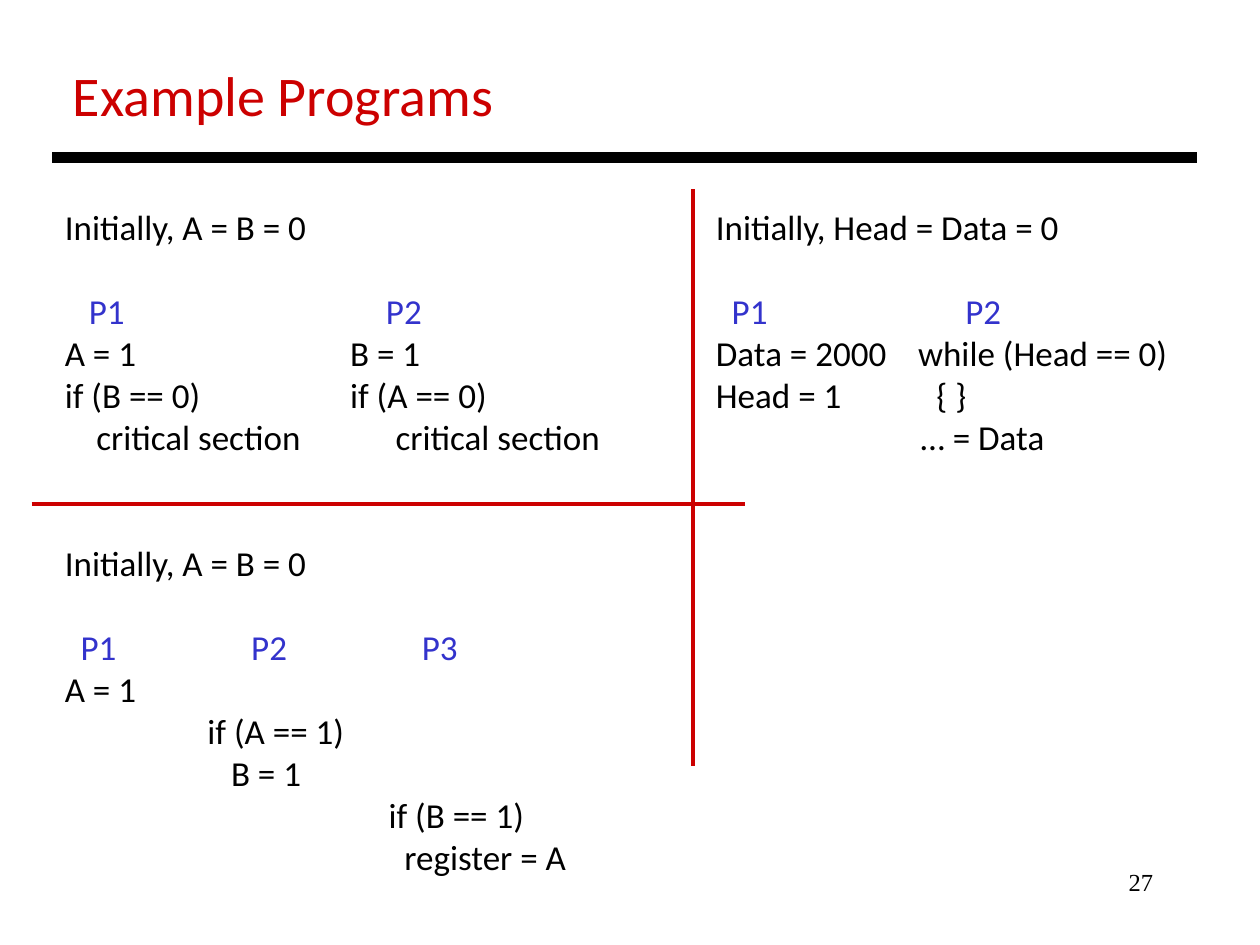
from dataclasses import dataclass

from pptx import Presentation
from pptx.dml.color import RGBColor
from pptx.enum import shapes, text
from pptx.oxml import ns
from pptx.util import Pt
from lxml import etree


@dataclass(frozen=True)
class Theme:
    """Colours, fonts and sizes of the slide."""
    ink: str = "000000"
    accent: str = "CC0000"
    process: str = "3333CC"
    sans: str = "Calibri"
    serif: str = "Times New Roman"
    title_size: int = 32
    code_size: int = 20
    number_size: int = 14
    blank_line: int = 24
    thick: float = 6
    thin: float = 2.25


THEME = Theme()

MUTUAL_EXCLUSION = [
    (0, THEME.ink, [(0, "Initially, A = B = 0")]),
    (1, THEME.process, [(13.7, "P1"), (183.5, "P2")]),
    (0, THEME.ink, [(0, "A = 1"), (163, "B = 1")]),
    (0, THEME.ink, [(0, "if (B == 0)"), (163, "if (A == 0)")]),
    (0, THEME.ink, [(18, "critical section"), (189, "critical section")]),
]
CAUSALITY = [
    (2, THEME.ink, [(0, "Initially, A = B = 0")]),
    (1, THEME.process, [(9, "P1"), (106.5, "P2"), (204, "P3")]),
    (0, THEME.ink, [(0, "A = 1")]),
    (0, THEME.ink, [(81.5, "if (A == 1)")]),
    (0, THEME.ink, [(95, "B = 1")]),
    (0, THEME.ink, [(185, "if (B == 1)")]),
    (0, THEME.ink, [(194, "register = A")]),
]
PRODUCER_CONSUMER = [
    (0, THEME.ink, [(0, "Initially, Head = Data = 0")]),
    (1, THEME.process, [(9, "P1"), (142.5, "P2")]),
    (0, THEME.ink, [(0, "Data = 2000"), (115.5, "while (Head == 0)")]),
    (0, THEME.ink, [(0, "Head = 1"), (126, "{ }")]),
    (0, THEME.ink, [(117, "… = Data")]),
]


def add_run(paragraph, words, size, color, font):
    """Add one formatted run."""
    run = paragraph.add_run()
    run.text = words
    run.font.size = Pt(size)
    run.font.name = font
    run.font.color.rgb = RGBColor.from_string(color)


def set_tabs(paragraph, stops):
    """Give a paragraph left tab stops."""
    tab_list = etree.SubElement(paragraph._p.get_or_add_pPr(), ns.qn("a:tabLst"))
    for stop in stops:
        etree.SubElement(tab_list, ns.qn("a:tab"), pos=str(Pt(stop)), algn="l")


def add_title(slide, box, words):
    """Place the heading in the title placeholder."""
    title = slide.shapes.title
    title.left, title.top, title.width, title.height = map(Pt, box)
    frame = title.text_frame
    frame.word_wrap = False
    frame.auto_size = text.MSO_AUTO_SIZE.NONE
    frame.vertical_anchor = text.MSO_ANCHOR.MIDDLE
    heading = frame.paragraphs[0]
    heading.alignment = text.PP_ALIGN.LEFT
    add_run(heading, words, THEME.title_size, THEME.accent, THEME.sans)


def add_programs(slide, box, rows):
    """Set program rows in columns by tab stops."""
    frame = slide.shapes.add_textbox(*map(Pt, box)).text_frame
    frame.word_wrap = True
    for index, (blanks, color, cells) in enumerate(rows):
        line = frame.add_paragraph() if index else frame.paragraphs[0]
        if blanks:
            line.space_before = Pt(blanks * THEME.blank_line)
        stops = [offset for offset, _ in cells if offset]
        if stops:
            set_tabs(line, stops)
        for offset, words in cells:
            lead = "\t" if offset else ""
            add_run(line, lead + words, THEME.code_size, color, THEME.sans)


def add_rule(slide, ends, color, width):
    """Draw a straight rule without shadow."""
    rule = slide.shapes.add_connector(shapes.MSO_CONNECTOR.STRAIGHT, *map(Pt, ends))
    rule.line.color.rgb = RGBColor.from_string(color)
    rule.line.width = Pt(width)
    etree.SubElement(rule._element.spPr, ns.qn("a:effectLst"))


def add_page_number(slide, box, number):
    """Place the page number at the right of its box."""
    frame = slide.shapes.add_textbox(*map(Pt, box)).text_frame
    frame.word_wrap = True
    line = frame.paragraphs[0]
    line.alignment = text.PP_ALIGN.RIGHT
    add_run(line, number, THEME.number_size, THEME.ink, THEME.serif)


def main():
    """Build and save the slide."""
    deck = Presentation()
    deck.slide_width, deck.slide_height = Pt(720), Pt(540)
    slide = deck.slides.add_slide(deck.slide_layouts[5])
    add_page_number(slide, (516, 492, 150, 36), "27")
    add_title(slide, (34.5, 31, 257, 46), "Example Programs")
    add_rule(slide, (30, 90, 684, 90), THEME.ink, THEME.thick)
    add_programs(slide, (30, 114, 324, 395), MUTUAL_EXCLUSION + CAUSALITY)
    add_rule(slide, (18, 288, 426, 288), THEME.accent, THEME.thin)
    add_programs(slide, (402, 114, 275, 153), PRODUCER_CONSUMER)
    add_rule(slide, (396, 108, 396, 438), THEME.accent, THEME.thin)
    deck.save("out.pptx")


if __name__ == "__main__":
    main()
